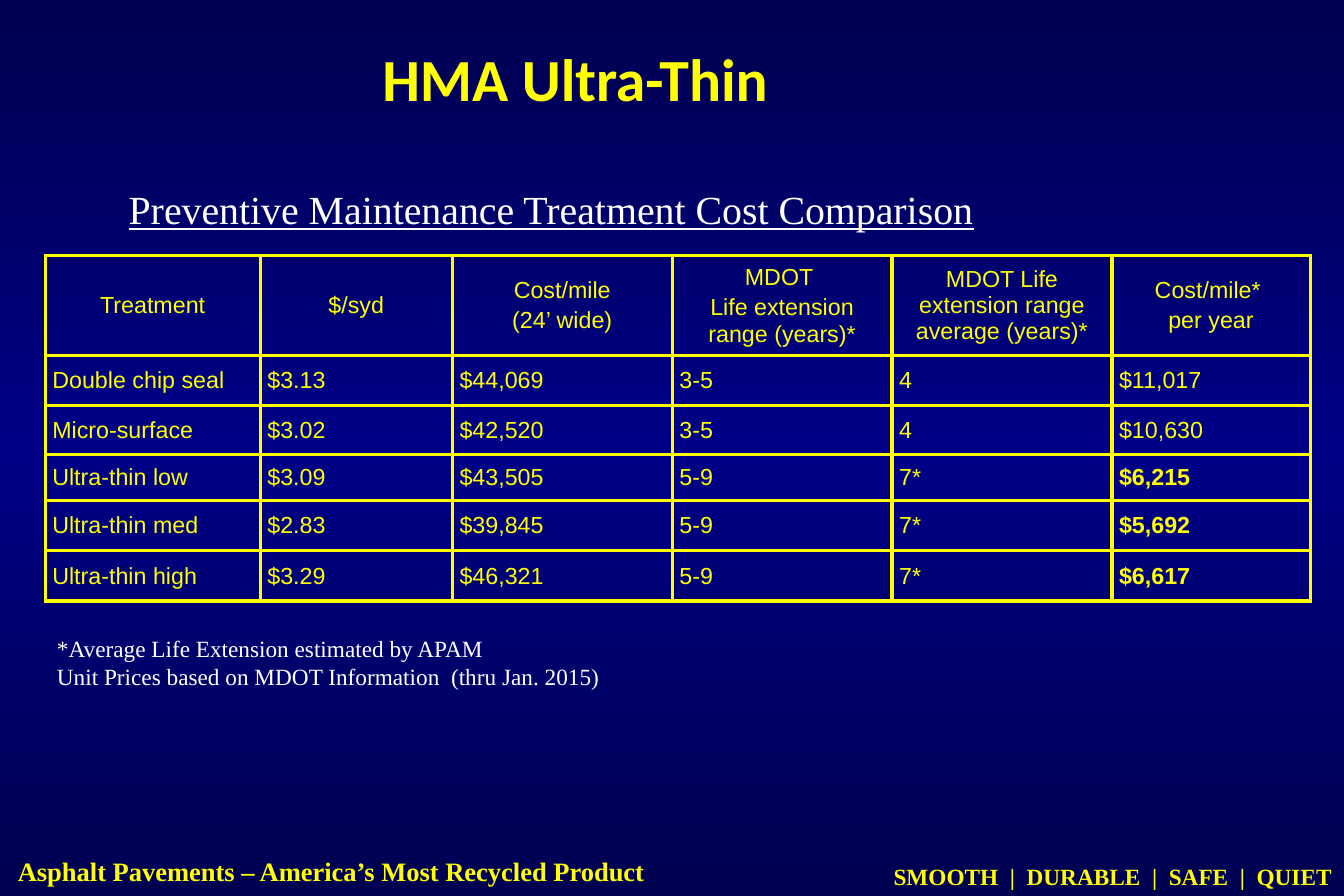
import copy

import pptx
import pptx.dml.color
import pptx.enum.text
import pptx.oxml
import pptx.oxml.ns
import pptx.util

ALIGN = pptx.enum.text.PP_ALIGN
ANCHOR = pptx.enum.text.MSO_ANCHOR
AUTO_SIZE = pptx.enum.text.MSO_AUTO_SIZE

WIDTH, HEIGHT = pptx.util.Inches(11.25), pptx.util.Inches(7.5)
COLOURS = {"edge": "000050", "middle": "000086", "yellow": "FFFF00", "white": "FFFFFF"}
SERIF = "Times New Roman"

# Table grid, in percent of the slide's width and height
COLUMNS = [16, 14.3, 16.36, 16.36, 16.36, 14.76]
ROWS = [11.2, 5.6, 5.4, 5.2, 5.6, 5.6]

HEADINGS = [
    ["Treatment"],
    ["$/syd"],
    ["Cost/mile", "(24’ wide)"],
    ["MDOT ", "Life extension range (years)*"],
    ["MDOT Life extension range average (years)*"],
    ["Cost/mile* ", "per year"],
]
TREATMENTS = [
    ["Double chip seal", "$3.13", "$44,069", "3-5", "4", "$11,017"],
    ["Micro-surface", "$3.02", "$42,520", "3-5", "4", "$10,630"],
    ["Ultra-thin low", "$3.09", "$43,505", "5-9", "7*", "$6,215"],
    ["Ultra-thin med", "$2.83", "$39,845", "5-9", "7*", "$5,692"],
    ["Ultra-thin high", "$3.29", "$46,321", "5-9", "7*", "$6,617"],
]


def across(percent):
    return round(WIDTH * percent / 100)


def down(percent):
    return round(HEIGHT * percent / 100)


def area(left, top, width, height):
    return across(left), down(top), across(width), down(height)


def rgb(name):
    return pptx.dml.color.RGBColor.from_string(COLOURS[name])


def write_text(frame, lines, font=SERIF, size=14, colour="yellow", bold=False,
               underline=False, align=ALIGN.LEFT, gap=0):
    for index, line in enumerate(lines):
        paragraph = frame.add_paragraph() if index else frame.paragraphs[0]
        paragraph.alignment = align
        if index:
            paragraph.space_before = pptx.util.Pt(gap)
        run = paragraph.add_run()
        run.text = line
        run.font.name = font
        run.font.size = pptx.util.Pt(size)
        run.font.bold = bold
        run.font.underline = underline
        run.font.color.rgb = rgb(colour)


def add_text(slide, place, lines, inset=0.1, **text_format):
    frame = slide.shapes.add_textbox(*area(*place)).text_frame
    frame.word_wrap = True
    frame.auto_size = AUTO_SIZE.SHAPE_TO_FIT_TEXT
    frame.margin_left = pptx.util.Inches(inset)
    write_text(frame, lines, **text_format)


def paint_background(slide):
    fill = slide.background.fill
    fill.gradient()
    stop_list = slide.element.find(".//" + pptx.oxml.ns.qn("a:gsLst"))
    stop_list.append(copy.deepcopy(stop_list[-1]))
    shades = ["edge", "middle", "edge"]
    for index, (stop, shade) in enumerate(zip(fill.gradient_stops, shades)):
        stop.color.rgb = rgb(shade)
        stop.position = index / 2
    fill.gradient_angle = 90


def set_title(slide, text):
    title = slide.shapes.title
    title.left, title.top, title.width, title.height = area(5, 2.3, 75.6, 12.7)
    title.text_frame.vertical_anchor = ANCHOR.MIDDLE
    title.text_frame.auto_size = AUTO_SIZE.NONE
    write_text(title.text_frame, [text], font="Calibri", size=36, bold=True,
               align=ALIGN.CENTER)


def format_cell(cell):
    cell.vertical_anchor = ANCHOR.MIDDLE
    cell.margin_left = cell.margin_right = pptx.util.Inches(0.06)
    cell.margin_top = cell.margin_bottom = pptx.util.Inches(0.05)
    properties = cell._tc.get_or_add_tcPr()
    for side in "LRTB":
        properties.append(pptx.oxml.parse_xml(
            f'<a:ln{side} {pptx.oxml.ns.nsdecls("a")} w="{pptx.util.Pt(2.25)}">'
            f'<a:solidFill><a:srgbClr val="{COLOURS["yellow"]}"/></a:solidFill>'
            f'</a:ln{side}>'))
    cell.fill.background()


def add_cost_table(slide):
    place = area(3.36, 28.5, sum(COLUMNS), sum(ROWS))
    costs = slide.shapes.add_table(len(ROWS), len(COLUMNS), *place).table
    costs.first_row = costs.horz_banding = False
    for column, share in zip(costs.columns, COLUMNS):
        column.width = across(share)
    for row, share in zip(costs.rows, ROWS):
        row.height = down(share)

    # Headings are centred
    for column, heading in enumerate(HEADINGS):
        cell = costs.cell(0, column)
        format_cell(cell)
        write_text(cell.text_frame, heading, font="Arial", align=ALIGN.CENTER, gap=2.8)

    # The yearly cost of each ultra-thin treatment is bold
    for row, treatment in enumerate(TREATMENTS, start=1):
        for column, value in enumerate(treatment):
            cell = costs.cell(row, column)
            format_cell(cell)
            yearly = column == len(COLUMNS) - 1
            write_text(cell.text_frame, [value], font="Arial",
                       bold=yearly and treatment[0].startswith("Ultra-thin"))


def main():
    deck = pptx.Presentation()
    deck.slide_width, deck.slide_height = WIDTH, HEIGHT
    slide = deck.slides.add_slide(deck.slide_layouts[5])
    paint_background(slide)

    # Footer slogans
    add_text(slide, (0, 94.8, 56.7, 4.9),
             ["Asphalt Pavements – America’s Most Recycled Product"],
             inset=0.15, size=16, bold=True)
    add_text(slide, (64.1, 95.6, 35.9, 4.5),
             ["SMOOTH  |  DURABLE  |  SAFE  |  QUIET"], bold=True, align=ALIGN.RIGHT)

    # Title, cost comparison and its notes
    set_title(slide, "HMA Ultra-Thin")
    add_cost_table(slide)
    add_text(slide, (8.7, 20, 85.2, 6.7),
             ["Preventive Maintenance Treatment Cost Comparison"],
             size=24, colour="white", underline=True)
    add_text(slide, (3.36, 70.1, 94.1, 7.6),
             ["*Average Life Extension estimated by APAM",
              "Unit Prices based on MDOT Information  (thru Jan. 2015)"],
             colour="white")

    deck.save("out.pptx")


if __name__ == "__main__":
    main()
